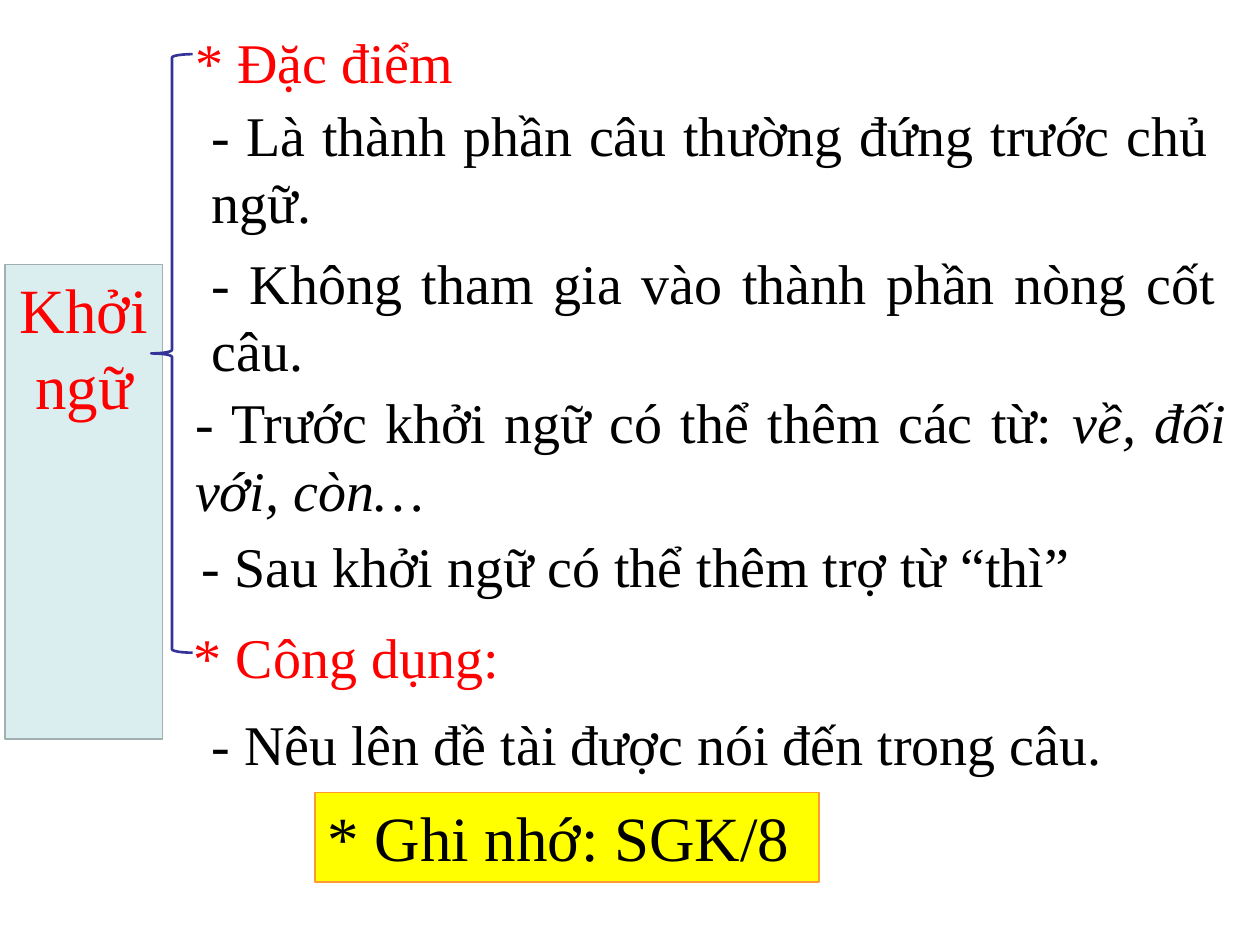
from dataclasses import dataclass
from pptx import Presentation
from pptx.dml.color import RGBColor as RGB
from pptx.enum.shapes import MSO_SHAPE as SHAPE
from pptx.enum.text import MSO_ANCHOR as ANCHOR, MSO_AUTO_SIZE as FIT, PP_ALIGN as ALIGN
from pptx.util import Inches, Pt


@dataclass(frozen=True)
class Theme:
    """Colours, font and type sizes of the slide."""
    font: str = "Times New Roman"
    body: int = 32
    large: int = 36
    red: str = "FF0000"
    black: str = "000000"
    pale: str = "DAEDEF"
    grey: str = "A1AFB1"
    navy: str = "333399"
    yellow: str = "FFFF00"
    orange: str = "FF9933"


THEME = Theme()

POINTS = [
    ((1.45, 0.17, 3.88, 0.5), THEME.red, "* Đặc điểm", ""),
    ((1.58, 0.75, 8.11, 0.59), THEME.black,
     "- Là thành phần câu thường đứng trước chủ ngữ.", ""),
    ((1.58, 1.92, 8.17, 0.47), THEME.black,
     "- Không tham gia vào thành phần nòng cốt câu.", ""),
    ((1.45, 3.03, 8.38, 0.39), THEME.black,
     "- Trước khởi ngữ có thể thêm các từ: ", "về, đối với, còn…"),
    ((1.5, 4.17, 8.17, 0.58), THEME.black,
     "- Sau khởi ngữ có thể thêm trợ từ “thì”", ""),
    ((1.44, 4.89, 4.39, 0.61), THEME.red, "* Công dụng:", ""),
    ((1.58, 5.58, 7.32, 0.58), THEME.black,
     "- Nêu lên đề tài được nói đến trong câu.", ""),
]


def set_all(item, values):
    """Set each named attribute on the item."""
    for name, value in values.items():
        setattr(item, name, value)


def place(shape, box):
    """Move and size a shape, in inches."""
    names = ("left", "top", "width", "height")
    set_all(shape, dict(zip(names, map(Inches, box))))


def write(shape, text, size, color, align=ALIGN.JUSTIFY, slant="", **frame):
    """Fill a shape with one paragraph, with an optional italic ending."""
    set_all(shape.text_frame, {"word_wrap": True, "auto_size": FIT.NONE,
                               "vertical_anchor": ANCHOR.TOP, **frame})
    para = shape.text_frame.paragraphs[0]
    para.alignment = align
    for part, italic in ((text, None), (slant, True)):
        if part:
            run = para.add_run()
            run.text = part
            set_all(run.font, {"name": THEME.font, "size": Pt(size), "italic": italic})
            run.font.color.rgb = RGB.from_string(color)


def paint(shape, line, width, fill=None):
    """Set the outline and fill of a shape."""
    if fill:
        shape.fill.solid()
        shape.fill.fore_color.rgb = RGB.from_string(fill)
    else:
        shape.fill.background()
    shape.line.color.rgb = RGB.from_string(line)
    shape.line.width = Pt(width)


def add_shape(slide, kind, box):
    """Add a preset shape without a shadow."""
    shape = slide.shapes.add_shape(kind, *map(Inches, box))
    shape.shadow.inherit = False
    return shape


def add_topic(slide):
    """Put the topic in the title placeholder."""
    title = slide.shapes.title
    place(title, (0.04, 2.1, 1.25, 1.31))
    paint(title, THEME.grey, 1, THEME.pale)
    write(title, "Khởi ngữ", THEME.large, THEME.red, ALIGN.CENTER,
          auto_size=FIT.SHAPE_TO_FIT_TEXT)


def add_point(slide, box, color, text, slant):
    """Add one line of the outline."""
    shape = slide.shapes.add_textbox(*map(Inches, box))
    write(shape, text, THEME.body, color, slant=slant)


def add_note(slide):
    """Add the yellow reminder box."""
    note = add_shape(slide, SHAPE.RECTANGLE, (2.5, 6.29, 4, 0.71))
    paint(note, THEME.orange, 0.75, THEME.yellow)
    write(note, "* Ghi nhớ: SGK/8", THEME.large, THEME.black,
          auto_size=FIT.SHAPE_TO_FIT_TEXT)


def main():
    """Build and save the slide."""
    deck = Presentation()
    set_all(deck, {"slide_width": Inches(10), "slide_height": Inches(7.5)})
    slide = deck.slides.add_slide(deck.slide_layouts.get_by_name("Title Only"))
    add_topic(slide)
    for point in POINTS:
        add_point(slide, *point)
    brace = add_shape(slide, SHAPE.LEFT_BRACE, (1.2, 0.43, 0.33, 4.75))
    paint(brace, THEME.navy, 1.5)
    add_note(slide)
    deck.save("out.pptx")


if __name__ == "__main__":
    main()
